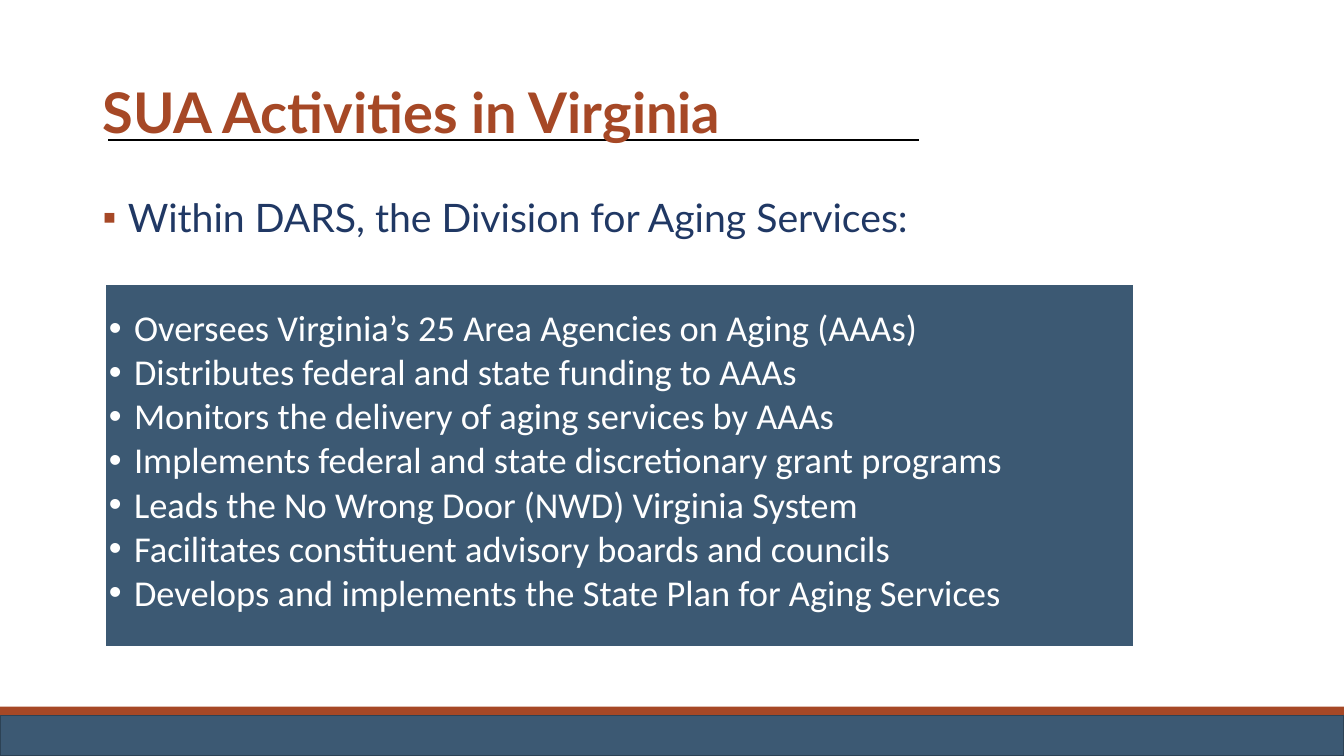
from lxml import etree
from pptx import Presentation
from pptx.dml.color import RGBColor
from pptx.enum.shapes import MSO_CONNECTOR, MSO_SHAPE
from pptx.enum.text import MSO_ANCHOR, PP_ALIGN
from pptx.oxml.ns import qn
from pptx.util import Inches, Pt

RECT = MSO_SHAPE.RECTANGLE
STRAIGHT = MSO_CONNECTOR.STRAIGHT
TOP, MIDDLE = MSO_ANCHOR.TOP, MSO_ANCHOR.MIDDLE
LEFT = PP_ALIGN.LEFT

TITLE = "SUA Activities in Virginia"
LEAD = "Within DARS, the Division for Aging Services:"
ACTIVITIES = [
    "Oversees Virginia’s 25 Area Agencies on Aging (AAAs)",
    "Distributes federal and state funding to AAAs",
    "Monitors the delivery of aging services by AAAs",
    "Implements federal and state discretionary grant programs",
    "Leads the No Wrong Door (NWD) Virginia System",
    "Facilitates constituent advisory boards and councils",
    "Develops and implements the State Plan for Aging Services",
]

COLORS = {"rust": "A64826", "slate": "3C5973", "edge": "2C4255",
          "navy": "203864", "white": "FFFFFF", "black": "000000"}
FORMATS = {
    "title": {"name": "Lato", "size": Pt(40), "bold": True},
    "lead": {"name": "Lato", "size": Pt(28)},
    "activity": {"name": "Calibri", "size": Pt(26)},
}

WIDTH, HEIGHT = 13.33, 7.5
MARGIN, TEXT_WIDTH = 0.92, 11.5
INDENT = 0.25
BAND_TOP, BAR_TOP = 7.01, 7.1
RULE_Y, RULE_LEFT, RULE_RIGHT = 1.39, 1.07, 9.11


def rgb(name):
    return RGBColor.from_string(COLORS[name])


def add_rect(slide, box, fill, edge=None):
    sp = slide.shapes.add_shape(RECT, *map(Inches, box))
    sp.shadow.inherit = False
    sp.fill.solid()
    sp.fill.fore_color.rgb = rgb(fill)
    if edge:
        sp.line.color.rgb = rgb(edge)
        sp.line.width = Pt(1)
    else:
        sp.line.fill.background()
    return sp


def add_bullet(p, char, color):
    pPr = p._p.get_or_add_pPr()
    pPr.set("marL", str(Inches(INDENT)))
    pPr.set("indent", str(-Inches(INDENT)))
    buClr = etree.SubElement(pPr, qn("a:buClr"))
    etree.SubElement(buClr, qn("a:srgbClr"), val=COLORS[color])
    etree.SubElement(pPr, qn("a:buFont"), typeface="Arial")
    etree.SubElement(pPr, qn("a:buChar"), char=char)


def write(sp, lines, style, color, anchor=TOP, bullet=None, after=0):
    tf = sp.text_frame
    tf.word_wrap = True
    tf.vertical_anchor = anchor
    for i, line in enumerate(lines):
        p = tf.paragraphs[0] if i == 0 else tf.add_paragraph()
        p.alignment = LEFT
        p.line_spacing = 0.9
        p.space_after = Pt(after)
        if bullet:
            add_bullet(p, *bullet)
        r = p.add_run()
        r.text = line
        for key, value in FORMATS[style].items():
            setattr(r.font, key, value)
        r.font.color.rgb = rgb(color)
    return tf


def add_text(slide, box, *args, **kwargs):
    sp = slide.shapes.add_textbox(*map(Inches, box))
    write(sp, *args, **kwargs)


def main():
    prs = Presentation()
    prs.slide_width, prs.slide_height = Inches(WIDTH), Inches(HEIGHT)
    s = prs.slides.add_slide(prs.slide_layouts[6])
    s.background.fill.solid()
    s.background.fill.fore_color.rgb = rgb("white")

    add_rect(s, (0, BAND_TOP, WIDTH, HEIGHT - BAND_TOP), "rust")
    add_rect(s, (0, BAR_TOP, WIDTH, HEIGHT - BAR_TOP), "slate", "edge")

    rule = s.shapes.add_connector(STRAIGHT, *map(
        Inches, (RULE_RIGHT, RULE_Y, RULE_LEFT, RULE_Y)))
    rule.line.color.rgb = rgb("black")
    rule.line.width = Pt(1.25)
    etree.SubElement(rule._element.spPr, qn("a:effectLst"))

    add_text(s, (MARGIN, 0.57, TEXT_WIDTH, 1.15), [TITLE], "title", "rust",
             anchor=MIDDLE)
    add_text(s, (MARGIN, 1.92, TEXT_WIDTH, 5.01), [LEAD], "lead", "navy",
             bullet=("▪", "rust"))

    panel = add_rect(s, (1.04, 2.82, 10.2, 3.6), "slate", "white")
    tf = write(panel, ACTIVITIES, "activity", "white",
               bullet=("•", "white"), after=3.4)
    tf.margin_left = tf.margin_right = tf.margin_bottom = Inches(0.04)
    tf.margin_top = Inches(0.26)

    prs.save("out.pptx")


if __name__ == "__main__":
    main()
